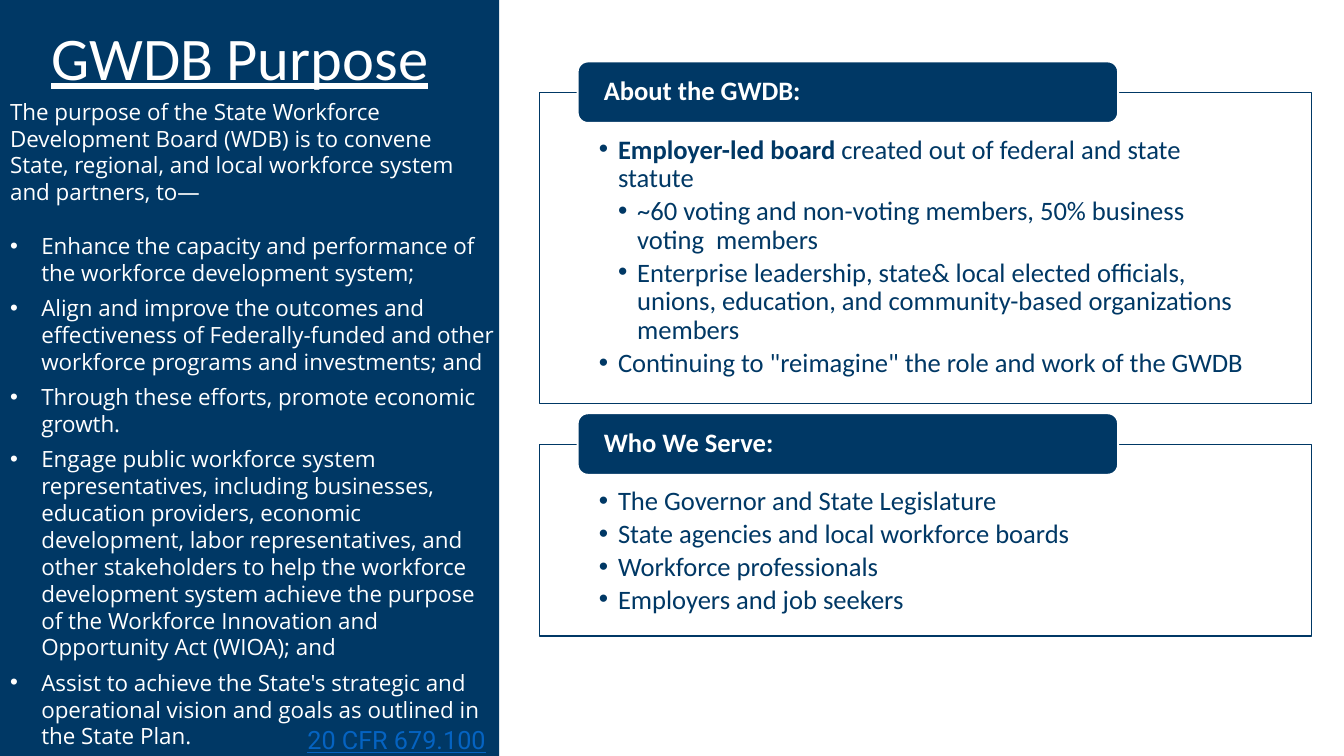
import pptx
import pptx.dml.color
import pptx.enum.shapes
import pptx.enum.text
import pptx.oxml.ns
import pptx.util
from collections import namedtuple
from lxml import etree

PX = 9144  # EMU per px, 100 px to the inch
SHAPES = pptx.enum.shapes.MSO_SHAPE
ANCHORS = pptx.enum.text.MSO_ANCHOR
ALIGN = pptx.enum.text.PP_ALIGN
Box = namedtuple("Box", "left top width height")
Style = namedtuple("Style", "font size color")


class Theme:
    navy, white, link = "003865", "FFFFFF", "0563C1"
    title = Style("Calibri", 43.2, white)
    purpose = Style("Open Sans", 16, white)
    citation = Style("Roboto", 18, link)
    heading = Style("Calibri", 19, white)
    detail = Style("Calibri", 19, navy)


INTRO = ("The purpose of the State Workforce Development Board (WDB) is to "
         "convene State, regional, and local workforce system and partners, to—")
GOALS = [
    "Enhance the capacity and performance of the workforce development system;",
    "Align and improve the outcomes and effectiveness of Federally-funded and "
    "other workforce programs and investments; and",
    "Through these efforts, promote economic growth.",
    "Engage public workforce system representatives, including businesses, "
    "education providers, economic development, labor representatives, and other "
    "stakeholders to help the workforce development system achieve the purpose of "
    "the Workforce Innovation and Opportunity Act (WIOA); and",
    "Assist to achieve the State's strategic and operational vision and goals as "
    "outlined in the State Plan.",
]
# Each detail is (level, bold lead, text)
ABOUT = [
    (1, "Employer-led board ", "created out of federal and state statute"),
    (2, "", "~60 voting and non-voting members, 50% business voting  members"),
    (2, "", "Enterprise leadership, state& local elected officials,  "
            "unions, education, and community-based organizations members"),
    (1, "", "Continuing to \"reimagine\" the role and work of the GWDB"),
]
SERVED = [(1, "", text) for text in (
    "The Governor and State Legislature",
    "State agencies and local workforce boards",
    "Workforce professionals",
    "Employers and job seekers",
)]


def rgb(color):
    return pptx.dml.color.RGBColor.from_string(color)


def place(part, box):
    part.left, part.top, part.width, part.height = (n * PX for n in box)


def set_frame(frame, insets, anchor=ANCHORS.TOP, wrap=True):
    frame.auto_size = pptx.enum.text.MSO_AUTO_SIZE.NONE
    frame.word_wrap = wrap
    frame.vertical_anchor = anchor
    (frame.margin_left, frame.margin_top,
     frame.margin_right, frame.margin_bottom) = (n * PX for n in insets)


def set_bullet(paragraph, indent, hanging, mark="•"):
    properties = paragraph._p.get_or_add_pPr()
    properties.set("marL", str(indent * PX))
    properties.set("indent", str(-hanging * PX))
    if mark:
        bullet_font = etree.SubElement(properties, pptx.oxml.ns.qn("a:buFont"))
        bullet_font.set("typeface", "Arial")
        etree.SubElement(properties, pptx.oxml.ns.qn("a:buChar")).set("char", mark)
    else:
        etree.SubElement(properties, pptx.oxml.ns.qn("a:buNone"))


def set_text(paragraph, style, spacing=1.0, after=0, align=ALIGN.LEFT):
    paragraph.alignment = align
    paragraph.line_spacing = spacing
    paragraph.space_before = pptx.util.Pt(0)
    paragraph.space_after = pptx.util.Pt(after)
    paragraph.font.name = style.font
    paragraph.font.size = pptx.util.Pt(style.size)
    paragraph.font.color.rgb = rgb(style.color)


def add_block(slide, kind, box, fill, line=None, line_width=0):
    block = slide.shapes.add_shape(kind, *(n * PX for n in box))
    block.shadow.inherit = False
    block.fill.solid()
    block.fill.fore_color.rgb = rgb(fill)
    if line:
        block.line.color.rgb = rgb(line)
        block.line.width = pptx.util.Pt(line_width)
    else:
        block.line.fill.background()
    return block


def add_sidebar(slide, box):
    # Navy band, sent behind the placeholders
    band = add_block(slide, SHAPES.RECTANGLE, box, Theme.navy)
    slide.shapes._spTree.insert(2, band._element)

    # Title
    title = slide.shapes.title
    place(title, Box(box.left + 32, box.top + 15, 412, 90))
    title.text_frame.text = "GWDB Purpose"
    set_frame(title.text_frame, (0, 10, 0, 10), ANCHORS.MIDDLE)
    heading = title.text_frame.paragraphs[0]
    set_text(heading, Theme.title, 0.9, align=ALIGN.CENTER)
    heading.font.underline = True

    # Purpose statement and its goals
    purpose = slide.placeholders[1]
    place(purpose, Box(box.left, box.top + 92, 501, 725))
    frame = purpose.text_frame
    set_frame(frame, (10, 5, 10, 5))
    frame.text = "\n".join([INTRO] + GOALS)
    intro, *goals = frame.paragraphs
    set_bullet(intro, 0, 0, mark=None)
    set_text(intro, Theme.purpose, after=19.2)
    for goal in goals:
        set_bullet(goal, 31, 31)
        set_text(goal, Theme.purpose, after=6)

    # Citation
    citation = slide.shapes.add_textbox(
        *(n * PX for n in Box(box.left + 295, box.top + 714, 669, 40)))
    set_frame(citation.text_frame, (10, 5, 10, 5))
    citation.text_frame.text = "20 CFR 679.100"
    source = citation.text_frame.paragraphs[0]
    set_text(source, Theme.citation)
    source.font.underline = True


def add_panel(slide, box, heading, details):
    # Outlined body with bullets
    body = add_block(slide, SHAPES.RECTANGLE, box, Theme.white, Theme.navy, 0.85)
    color = body.fill._xPr.find(".//" + pptx.oxml.ns.qn("a:srgbClr"))
    etree.SubElement(color, pptx.oxml.ns.qn("a:alpha")).set("val", "90000")
    frame = body.text_frame
    set_frame(frame, (59, 43, 59, 15))
    for number, (level, lead, text) in enumerate(details):
        detail = frame.add_paragraph() if number else frame.paragraphs[0]
        detail.level = level
        set_bullet(detail, 19 * level, 19)
        set_text(detail, Theme.detail, 0.9, after=2.85)
        if lead:
            run = detail.add_run()
            run.text = lead
            run.font.bold = True
        detail.add_run().text = text

    # Heading tab straddling the top edge
    tab = add_block(slide, SHAPES.ROUNDED_RECTANGLE,
                    Box(box.left + 38, box.top - 31, 536, 61),
                    Theme.navy, Theme.white, 1.35)
    set_frame(tab.text_frame, (23, 3, 23, 3), ANCHORS.MIDDLE)
    tab.text_frame.text = heading
    label = tab.text_frame.paragraphs[0]
    set_text(label, Theme.heading, 0.9)
    label.font.bold = True


def main():
    deck = pptx.Presentation()
    deck.slide_width, deck.slide_height = 1333 * PX, 750 * PX
    slide = deck.slides.add_slide(deck.slide_layouts[1])
    add_sidebar(slide, Box(0, 0, 495, 750))
    add_panel(slide, Box(535, 92, 766, 308), "About the GWDB:", ABOUT)
    add_panel(slide, Box(535, 441, 766, 190), "Who We Serve:", SERVED)
    deck.save("out.pptx")


if __name__ == "__main__":
    main()
